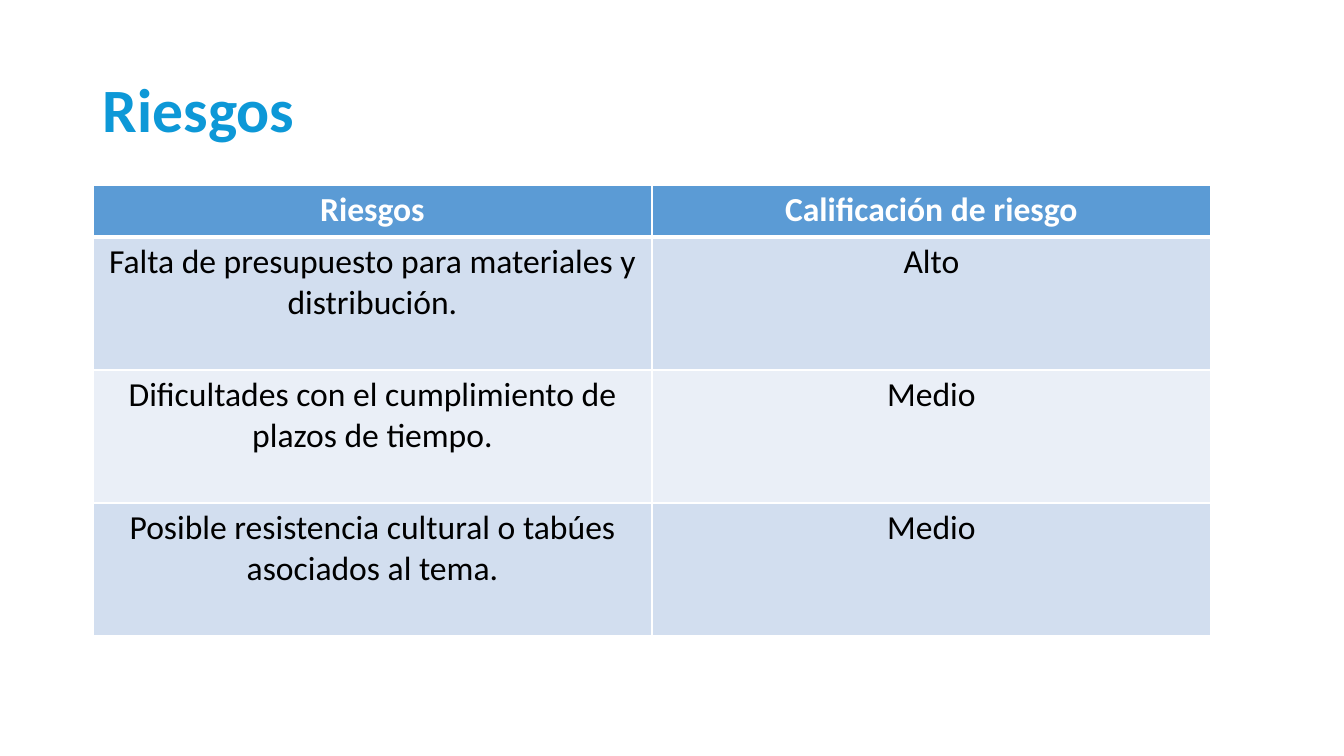
from lxml import etree
from pptx import Presentation
from pptx import util as u
from pptx.dml.color import RGBColor
from pptx.enum import text
from pptx.oxml import ns

PX = 914400 / 100.8
FONT = "Calibri"
TITLE_BLUE = RGBColor(0x0D, 0x98, 0xD7)
HEADER_BLUE = RGBColor(0x5B, 0x9B, 0xD5)
BAND_DARK = RGBColor(0xD2, 0xDE, 0xEF)
BAND_LIGHT = RGBColor(0xEA, 0xEF, 0xF7)
WHITE = RGBColor(0xFF, 0xFF, 0xFF)
BLACK = RGBColor(0x00, 0x00, 0x00)

RISKS = [
    ("Riesgos", "Calificación de riesgo"),
    ("Falta de presupuesto para materiales y distribución.", "Alto"),
    ("Dificultades con el cumplimiento de plazos de tiempo.", "Medio"),
    ("Posible resistencia cultural o tabúes asociados al tema.", "Medio"),
]


def px(*lengths):
    return [u.Emu(round(length * PX)) for length in lengths]


def write(frame, words, size, color, bold=False, align=text.PP_ALIGN.LEFT, spacing=1.0):
    para = frame.paragraphs[0]
    para.alignment = align
    para.line_spacing = spacing
    span = para.add_run()
    span.text = words
    span.font.name = FONT
    span.font.size = u.Pt(size)
    span.font.bold = bold
    span.font.color.rgb = color


def add_title(page, words, left, top, width, height):
    box = page.shapes.add_textbox(*px(left, top, width, height))
    box.text_frame.word_wrap = True
    box.text_frame.vertical_anchor = text.MSO_ANCHOR.MIDDLE
    write(box.text_frame, words, 44, TITLE_BLUE, bold=True, spacing=0.9)


def set_borders(cell, **widths):
    """Draw white cell borders; widths maps lnL, lnR, lnT and lnB to points."""
    properties = cell._tc.get_or_add_tcPr()
    for side, width in widths.items():
        line = etree.SubElement(properties, ns.qn(f"a:{side}"), w=str(u.Pt(width)))
        fill = etree.SubElement(line, ns.qn("a:solidFill"))
        etree.SubElement(fill, ns.qn("a:srgbClr"), val=str(WHITE))


def add_risk_table(page, rows, left, top, column_width, header_height, row_height):
    columns = len(rows[0])
    height = header_height + row_height * (len(rows) - 1)
    frame = page.shapes.add_table(
        len(rows), columns, *px(left, top, column_width * columns, height))
    table = frame.table
    for column in table.columns:
        column.width = px(column_width)[0]
    for r, words in enumerate(rows):
        header = r == 0
        table.rows[r].height = px(header_height if header else row_height)[0]
        band = HEADER_BLUE if header else (BAND_LIGHT, BAND_DARK)[r % 2]
        for c, label in enumerate(words):
            cell = table.cell(r, c)
            set_borders(cell, lnL=1, lnR=1, lnT=3 if r == 1 else 1, lnB=3 if header else 1)
            cell.fill.solid()
            cell.fill.fore_color.rgb = band
            write(cell.text_frame, label, 24, WHITE if header else BLACK,
                  bold=header, align=text.PP_ALIGN.CENTER)


def main():
    deck = Presentation()
    deck.slide_width, deck.slide_height = px(1344, 756)
    page = deck.slides.add_slide(deck.slide_layouts[6])
    add_title(page, "Riesgos", 93, 40, 580, 146)
    add_risk_table(page, RISKS, 93, 185, 559, 52, 133)
    deck.save("out.pptx")


if __name__ == "__main__":
    main()
